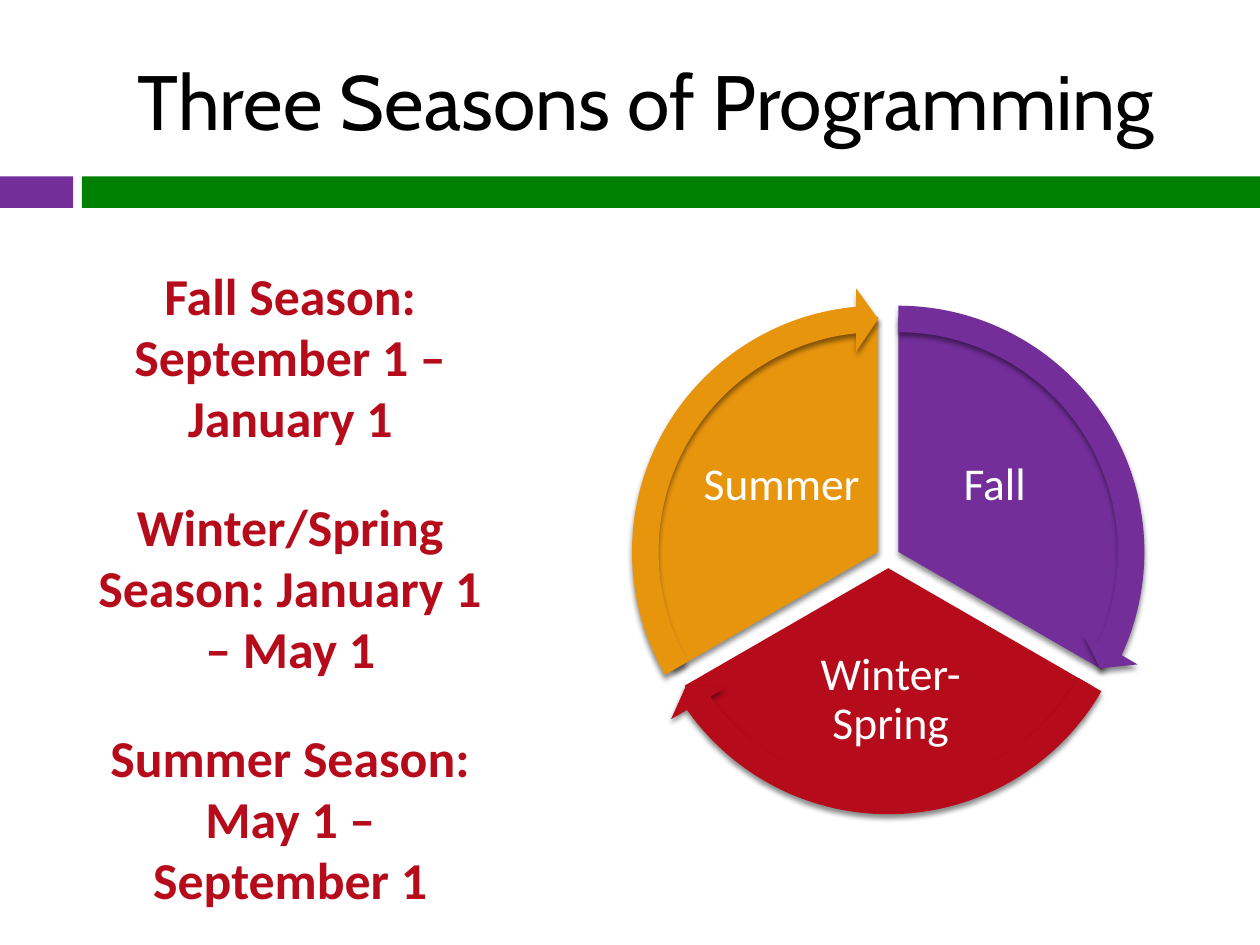
import pptx
import pptx.util
import pptx.dml.color
import pptx.enum.shapes
import pptx.enum.text
import pptx.oxml
import pptx.oxml.ns

Inches = pptx.util.Inches
Pt = pptx.util.Pt
Shape = pptx.enum.shapes.MSO_SHAPE
Anchor = pptx.enum.text.MSO_ANCHOR

COLORS = {
    "purple": "732E9A",
    "green": "008000",
    "red": "B50B1B",
    "orange": "E8950E",
    "black": "000000",
    "white": "FFFFFF",
}
DATES = [
    "Fall Season: September 1 – January 1",
    "Winter/Spring Season: January 1 – May 1",
    "Summer Season: May 1 – September 1",
]
SEASONS = [
    ("Fall", "purple", (7.13, 4.38), (162, 18), 14.73, (7.23, 3.3, 1.33, 1.11)),
    ("Winter-Spring", "red", (7.05, 4.51), (18, 90), 86.72, (6.07, 5.07, 2, 0.98)),
    ("Summer", "orange", (6.97, 4.38), (90, 162), 158.73, (5.54, 3.3, 1.33, 1.11)),
]
PIE_SIZE = 3.73
ARROW_SIZE = 4.2
SHADOW = (
    '<a:effectLst {}><a:outerShdw blurRad="38100" dist="30480" dir="5400000" '
    'rotWithShape="0"><a:srgbClr val="000000"><a:alpha val="45000"/></a:srgbClr>'
    "</a:outerShdw></a:effectLst>"
).format(pptx.oxml.ns.nsdecls("a"))


def rgb(color):
    return pptx.dml.color.RGBColor.from_string(COLORS[color])


def add_filled(page, kind, place, color):
    shape = page.shapes.add_shape(kind, *map(Inches, place))
    shape.shadow.inherit = False
    shape.fill.solid()
    shape.fill.fore_color.rgb = rgb(color)
    shape.line.fill.background()
    return shape


def add_round(page, kind, center, size, color, adjustments):
    left, top = (middle - size / 2 for middle in center)
    shape = add_filled(page, kind, (left, top, size, size), color)
    for index, value in enumerate(adjustments):
        shape.adjustments[index] = value
    properties = shape.fill._xPr
    properties.remove(properties.find(pptx.oxml.ns.qn("a:effectLst")))
    properties.append(pptx.oxml.parse_xml(SHADOW))


def add_text(page, place, texts, font, size, color, anchor=Anchor.MIDDLE,
             bold=False, inset=None, line_spacing=None, gap=0):
    box = page.shapes.add_textbox(*map(Inches, place))
    frame = box.text_frame
    frame.word_wrap = True
    frame.vertical_anchor = anchor
    if inset is not None:
        frame.margin_left = frame.margin_right = Inches(inset)
        frame.margin_top = frame.margin_bottom = Inches(inset)
    for index, text in enumerate(texts):
        para = frame.add_paragraph() if index else frame.paragraphs[0]
        para.alignment = pptx.enum.text.PP_ALIGN.CENTER
        para.line_spacing = line_spacing
        if index:
            para.space_before = Pt(gap)
        span = para.add_run()
        span.text = text
        span.font.name = font
        span.font.size = Pt(size)
        span.font.bold = bold
        span.font.color.rgb = rgb(color)


def add_season_cycle(page):
    for name, color, center, angles, tip, label in SEASONS:
        add_round(page, Shape.PIE, center, PIE_SIZE, color, angles)
        add_text(page, label, [name], "Calibri", 26, "white",
                 inset=0.04, line_spacing=0.9)
    for name, color, center, angles, tip, label in SEASONS:
        add_round(page, Shape.CIRCULAR_ARROW, center, ARROW_SIZE, color,
                  (0.05, 3.28, tip, angles[0], 0.06))


def main():
    deck = pptx.Presentation()
    deck.slide_width = Inches(10)
    deck.slide_height = Inches(7.5)
    page = deck.slides.add_slide(deck.slide_layouts[6])
    add_filled(page, Shape.RECTANGLE, (0, 1.4, 0.58, 0.25), "purple")
    add_filled(page, Shape.RECTANGLE, (0.65, 1.4, 9.35, 0.25), "green")
    add_text(page, (0.67, 0.25, 8.92, 1.08), ["Three Seasons of Programming"],
             "Cabin", 44, "black")
    add_text(page, (0.67, 2.07, 3.27, 5.07), DATES, "Calibri", 29.6, "red",
             anchor=Anchor.TOP, bold=True, line_spacing=0.98, gap=27.5)
    add_season_cycle(page)
    deck.save("out.pptx")


if __name__ == "__main__":
    main()
